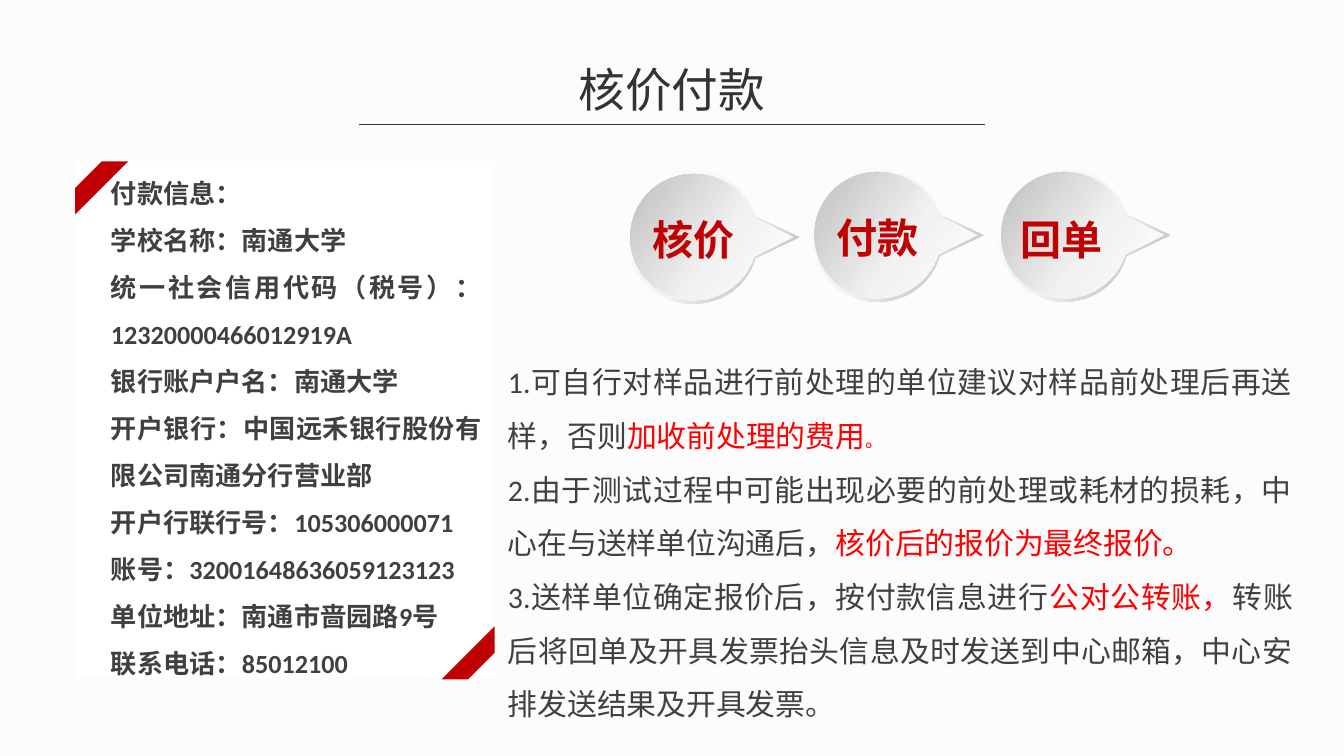
from copy import deepcopy
from itertools import islice
from lxml.etree import SubElement
from pptx import Presentation
from pptx.dml.color import RGBColor
from pptx.enum.shapes import MSO_CONNECTOR, MSO_SHAPE
from pptx.enum.text import MSO_AUTO_SIZE, PP_ALIGN
from pptx.oxml.ns import qn
from pptx.util import Emu, Pt

SCALE = 4572
RED, BRIGHT, GRAY, DARK = "C00002", "FF0000", "404040", "333333"

INFO = [
    "付款信息：",
    "学校名称：南通大学",
    "统一社会信用代码（税号）：12320000466012919A",
    "银行账户户名：南通大学",
    "开户银行：中国远禾银行股份有限公司南通分行营业部",
    "开户行联行号：105306000071",
    "账号：32001648636059123123",
    "单位地址：南通市啬园路9号",
    "联系电话：85012100",
]
NOTES = [
    [("1.可自行对样品进行前处理的单位建议对样品前处理后再送样，否则", GRAY, 16),
     ("加收前处理的费用", BRIGHT, 16), ("。", BRIGHT, 10)],
    [("2.由于测试过程中可能出现必要的前处理或耗材的损耗，中心在与送样单位沟通后，", GRAY, 16),
     ("核价后的报价为最终报价。", BRIGHT, 16)],
    [("3.送样单位确定报价后，按付款信息进行", GRAY, 16), ("公对公转账，", BRIGHT, 16),
     ("转账后将回单及开具发票抬头信息及时发送到中心邮箱，中心安排发送结果及开具发票。", GRAY, 16)],
]
STEPS = [
    ("核价", 1032, 353, (958, 319, 148, 74)),
    ("付款", 1306, 350, (1232, 316, 148, 74)),
    ("回单", 1584, 350, (1488, 319, 184, 74)),
]


def mirror(half):
    """Complete a half curve with its reflection across the axis."""
    return half + [(x, -y) for x, y in reversed(half[:-1])]


EDGE = [(157, 0)] + mirror(
    [(92, 31), (80, 71), (44, 99), (0, 99), (-55, 99), (-99, 55), (-99, 0)])
HOLE = [(46, 55), (46, -55)] + mirror(
    [(80, -39), (64, -69), (34, -89), (0, -89), (-50, -89), (-89, -50), (-89, 0)])
BODY = [(148, 0)] + mirror(
    [(90, 29), (78, 67), (42, 94), (0, 94), (-52, 94), (-94, 52), (-94, 0)])
RIM = ([EDGE, HOLE], [(0, "FFFFFF"), (0.55, "F2F2F2"), (1, "A6A6A6")], 45)
FACE = ([BODY], [(0, "FFFFFF"), (0.43, "F2F2F2"), (1, "BFBFBF")], 235)


def px(n):
    """Turn px into EMU."""
    return Emu(n * SCALE)


def color(code):
    """Turn a hex string into a colour."""
    return RGBColor.from_string(code)


def assign(target, values):
    """Set each named attribute of a target."""
    for name, value in values.items():
        setattr(target, name, value)


def bend(item):
    """Turn the last twelve segments of each outline into four curves."""
    for close in list(item._element.iter(qn("a:close"))):
        parts = list(islice(close.itersiblings(preceding=True), 12))[::-1]
        for i in range(0, 12, 3):
            curve = close.makeelement(qn("a:cubicBezTo"))
            close.addprevious(curve)
            for part in parts[i:i + 3]:
                curve.append(part[0])
                close.getparent().remove(part)


class Deck:
    """Hold the style and the current slide."""

    def __init__(self, width, height, back):
        """Start a deck with one blank slide."""
        self.show = Presentation()
        assign(self.show, {"slide_width": px(width), "slide_height": px(height)})
        self.font = "Calibri"
        self.slide = self.show.slides.add_slide(self.show.slide_layouts[6])
        self.slide.background.fill.solid()
        self.slide.background.fill.fore_color.rgb = color(back)
        self.home = self.slide.shapes

    def shape(self, kind, box, fill, turn=0):
        """Add a plain filled preset shape."""
        item = self.home.add_shape(kind, *map(px, box))
        item.rotation = turn
        item.shadow.inherit = False
        item.fill.solid()
        item.fill.fore_color.rgb = color(fill)
        item.line.fill.background()

    def line(self, start, end, tint, width):
        """Add a straight line."""
        item = self.home.add_connector(MSO_CONNECTOR.STRAIGHT, *map(px, start + end))
        item.line.color.rgb = color(tint)
        item.line.width = Pt(width)
        SubElement(item._element.spPr, qn("a:effectLst"))

    def text(self, box, rows, align, bold=False, space=None, inset=0):
        """Add a text box whose rows are lists of text, colour and size."""
        frame = self.home.add_textbox(*map(px, box)).text_frame
        side, end = px(inset * 2), px(inset)
        assign(frame, {"word_wrap": True, "auto_size": MSO_AUTO_SIZE.SHAPE_TO_FIT_TEXT,
                       "margin_left": side, "margin_right": side,
                       "margin_top": end, "margin_bottom": end})
        for i, row in enumerate(rows):
            para = frame.add_paragraph() if i else frame.paragraphs[0]
            assign(para, {"alignment": align, "line_spacing": space})
            for words, tint, size in row:
                run = para.add_run()
                run.text = words
                assign(run.font, {"name": self.font, "size": Pt(size), "bold": bold})
                run.font.color.rgb = color(tint)

    def drop(self, x, y, loops, stops, angle):
        """Add a curved drop, turned to point right, with a gradient fill."""
        across = [dot[0] for dot in loops[0]]
        mid = (min(across) + max(across)) // 2
        turned = [[(x + mid + b, y + mid - a) for a, b in loop] for loop in loops]
        pen = self.home.build_freeform(*turned[0][0], scale=SCALE)
        for i, loop in enumerate(turned):
            if i:
                pen.move_to(*loop[0])
            pen.add_line_segments(loop[1:], close=True)
        item = pen.convert_to_shape()
        bend(item)
        item.rotation = 90
        item.shadow.inherit = False
        item.line.fill.background()
        item.fill.gradient()
        item.fill.gradient_angle = angle
        marks = next(item._element.iter(qn("a:gsLst")))
        marks.append(deepcopy(marks[-1]))
        for stop, (place, tint) in zip(item.fill.gradient_stops, stops):
            stop.position = place
            stop.color.rgb = color(tint)

    def step(self, name, x, y, box):
        """Add a group of two drops and a label."""
        self.home = self.slide.shapes.add_group_shape().shapes
        self.drop(x, y, *RIM)
        self.drop(x, y, *FACE)
        self.text(box, [[(name, RED, 22)]], PP_ALIGN.CENTER, bold=True)
        self.home = self.slide.shapes


def main():
    """Build and save the slide."""
    deck = Deck(2000, 1125, "FCFCFC")
    deck.shape(MSO_SHAPE.RECTANGLE, (112, 240, 624, 768), "FFFFFF")
    deck.text((630, 80, 740, 104), [[("核价付款", DARK, 25)]], PP_ALIGN.CENTER, inset=10)
    deck.line((534, 185), (1466, 185), DARK, 0.75)
    deck.text((756, 515, 1168, 566), NOTES, PP_ALIGN.JUSTIFY, space=1.5)
    deck.shape(MSO_SHAPE.DIAGONAL_STRIPE, (112, 240, 79, 79), RED)
    deck.shape(MSO_SHAPE.DIAGONAL_STRIPE, (657, 932, 79, 79), RED, 180)
    for step in STEPS:
        deck.step(*step)
    deck.text((165, 240, 552, 778), [[(row, GRAY, 14)] for row in INFO],
              PP_ALIGN.JUSTIFY, bold=True, space=1.5)
    deck.show.save("out.pptx")


if __name__ == "__main__":
    main()
